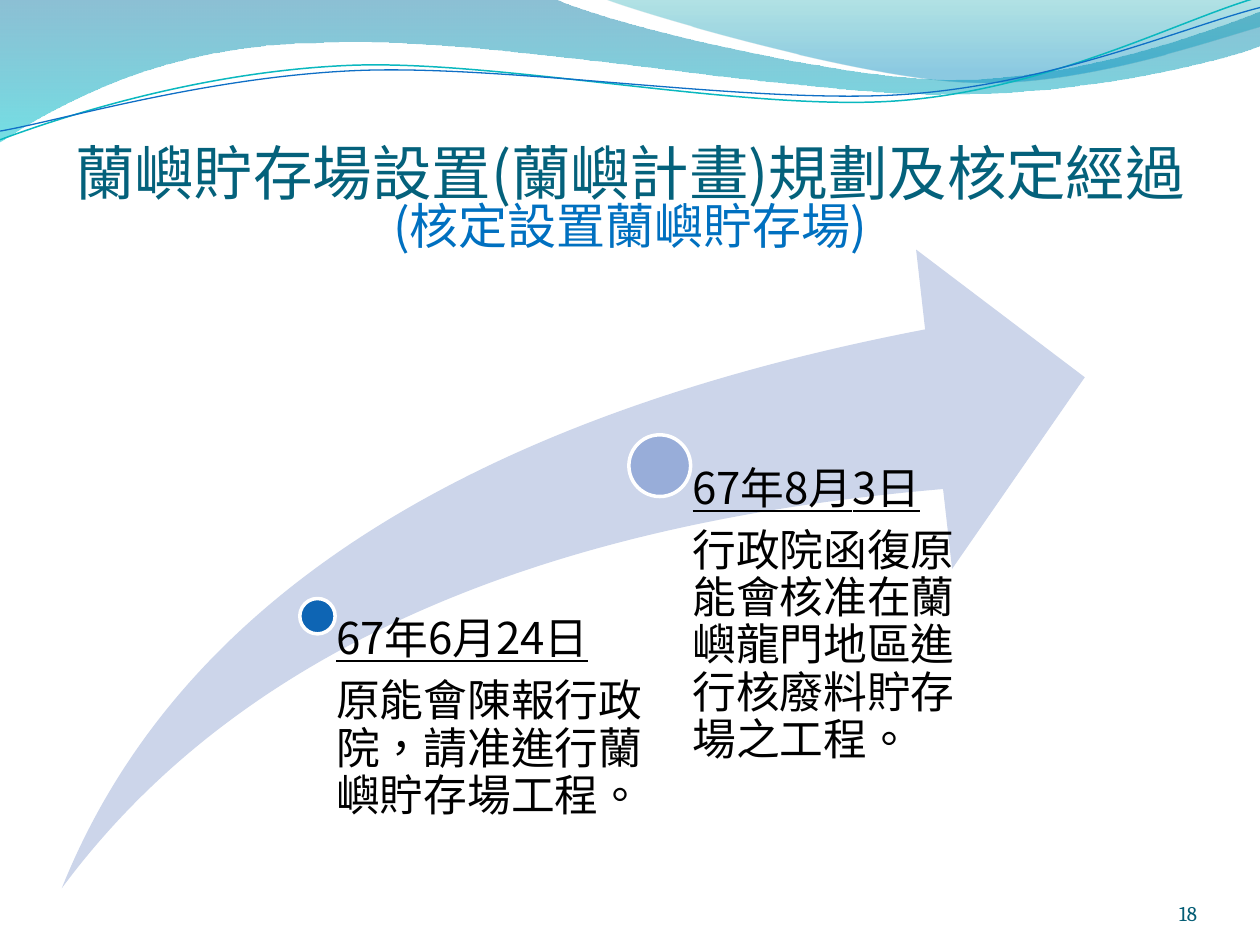
from pptx import Presentation
from pptx.dml.color import RGBColor
from pptx.enum.shapes import MSO_SHAPE
from pptx.enum.text import MSO_ANCHOR, PP_ALIGN
from pptx.oxml.ns import qn
from pptx.util import Pt
from lxml.etree import SubElement

SANS = "Noto Sans CJK SC"

# Each outline is a start point, then segments: 2 numbers for a line, 6 for a Bézier curve.
BROAD_WAVE = [(0, -0.7), (316.8, -0.7),
              (342.7, 12.2, 478.1, 45.4, 545.8, 45.4), (614.2, 45.4, 689.8, 18.7, 720, 6.5),
              (720.7, 25.9),
              (707.8, 31.7, 626.4, 54.7, 537.1, 54), (447.8, 54, 275, 20.2, 185, 24.5),
              (92.9, 25.2, 33.1, 59.8, -0.7, 81.4), (0, -0.7)]
RIGHT_WAVE = [(344.9, -0.7), (366.5, 7.9, 491, 44.6, 553.7, 46.8),
              (616.3, 49.7, 691.9, 23, 720, 15.1), (720, 0), (344.9, -0.7)]
TEAL_STRAND = [(0, 79.9), (34.6, 67, 113.8, 41, 199.4, 37.4),
               (284.4, 33.8, 427, 64.1, 513.4, 57.6), (599.8, 51.1, 675.4, 10.8, 718.6, -1.4)]
BLUE_STRAND = [(0, 74.9), (33.8, 69.1, 118.1, 43.9, 203.8, 40.3),
               (290.2, 36.7, 429.8, 59.8, 516.2, 54), (601.9, 48.2, 677.5, 15.1, 720, 4.3)]

ARROW_LEFT, ARROW_TOP, ARROW_WIDTH, ARROW_HEIGHT = 35.3, 142.6, 584.6, 365
# Centre x, centre y, diameter, colour, text inset, date, event
MILESTONES = [
    (181.4, 352.1, 20.2, "0E65B4", 10.8, "67年6月24日",
     "原能會陳報行政院，請准進行蘭嶼貯存場工程。"),
    (377, 266.1, 35.3, "98ADD9", 18.7, "67年8月3日",
     "行政院函復原能會核准在蘭嶼龍門地區進行核廢料貯存場之工程。"),
]


def rgb(hex_string):
    return RGBColor.from_string(hex_string)


def add_outline(slide, outline, close):
    """Lay every point as a corner, then join the corners of each curve into one Bézier."""
    corners = [(Pt(x), Pt(y)) for segment in outline
               for x, y in zip(segment[::2], segment[1::2])]
    builder = slide.shapes.build_freeform(*corners[0])
    builder.add_line_segments(corners[1:], close=close)
    shape = builder.convert_to_shape()
    shape.shadow.inherit = False

    lines = iter(list(shape._element.spPr.iter(qn("a:lnTo"))))
    for segment in outline[1:]:
        first = next(lines)
        if len(segment) == 6:
            curve = first.makeelement(qn("a:cubicBezTo"))
            first.addprevious(curve)
            for line in (first, next(lines), next(lines)):
                curve.append(line[0])
                line.getparent().remove(line)
    return shape


def add_wave(slide, outline, stops):
    """Add a wave filled from top to bottom; a stop is position, colour, opacity in percent."""
    shape = add_outline(slide, outline, True)
    shape.line.fill.background()
    shape.fill.gradient()
    shape.fill.gradient_angle = 270
    for gradient_stop, (position, color, _) in zip(shape.fill.gradient_stops, stops):
        gradient_stop.position = position
        gradient_stop.color.rgb = rgb(color)
    for element, (_, _, opacity) in zip(shape._element.spPr.iter(qn("a:srgbClr")), stops):
        SubElement(element, qn("a:alpha"), val=str(opacity * 1000))


def add_strand(slide, outline, color, width):
    shape = add_outline(slide, outline, False)
    shape.fill.background()
    shape.line.color.rgb = rgb(color)
    shape.line.width = Pt(width)


def add_preset(slide, preset, left, top, width, height, color):
    shape = slide.shapes.add_shape(preset, Pt(left), Pt(top), Pt(width), Pt(height))
    shape.shadow.inherit = False
    shape.fill.solid()
    shape.fill.fore_color.rgb = rgb(color)
    shape.line.fill.background()
    return shape


def add_text(slide, left, top, width, height, text, anchor=MSO_ANCHOR.TOP, inset=0):
    box = slide.shapes.add_textbox(Pt(left), Pt(top), Pt(width), Pt(height))
    frame = box.text_frame
    frame.word_wrap = True
    frame.vertical_anchor = anchor
    frame.margin_left = Pt(inset)
    frame.margin_top = frame.margin_right = frame.margin_bottom = 0
    frame.text = text
    return frame.paragraphs


def style(run, size, color, font=SANS, underline=False):
    run.font.size = Pt(size)
    run.font.name = font
    run.font.underline = underline
    run.font.color.rgb = rgb(color)
    run.font._element.set("lang", "zh-TW")
    SubElement(run.font._element, qn("a:ea"), typeface=font)


def add_milestone(slide, center_x, center_y, diameter, color, inset, date, event):
    dot = add_preset(slide, MSO_SHAPE.OVAL, center_x - diameter / 2, center_y - diameter / 2,
                     diameter, diameter, color)
    dot.line.color.rgb = rgb("FFFFFF")
    dot.line.width = Pt(2)
    height = ARROW_TOP + ARROW_HEIGHT - center_y
    paragraphs = add_text(slide, center_x, center_y, 190, height, f"{date}\n{event}", inset=inset)
    for paragraph, underline in zip(paragraphs, (True, False)):
        paragraph.line_spacing = Pt(27)
        paragraph.space_after = Pt(8.5)
        style(paragraph.runs[0], 25, "000000", underline=underline)


def main():
    presentation = Presentation()
    presentation.slide_width, presentation.slide_height = Pt(720), Pt(540)
    slide = presentation.slides.add_slide(presentation.slide_layouts[6])

    add_wave(slide, BROAD_WAVE, [(0, "0074A1", 45), (1, "00C6CF", 55)])
    add_wave(slide, RIGHT_WAVE, [(0, "00A1A9", 30), (0.8, "008BBF", 45)])
    add_strand(slide, TEAL_STRAND, "0AB8BF", 0.85)
    add_strand(slide, BLUE_STRAND, "0F6FC6", 0.75)

    title, = add_text(slide, 36, 55.4, 648, 90,
                      "蘭嶼貯存場設置(蘭嶼計畫)規劃及核定經過\v(核定設置蘭嶼貯存場)",
                      MSO_ANCHOR.BOTTOM)
    title.alignment = PP_ALIGN.CENTER
    title.line_spacing = 0.81
    heading, subtitle = title.runs
    style(heading, 34, "04617B")
    style(subtitle, 28, "0070C0")

    number, = add_text(slide, 624, 500.4, 60, 28.8, "18", MSO_ANCHOR.BOTTOM)
    number.alignment = PP_ALIGN.RIGHT
    style(number.runs[0], 12, "045D75", "Cambria")

    arrow = add_preset(slide, MSO_SHAPE.SWOOSH_ARROW, ARROW_LEFT, ARROW_TOP,
                       ARROW_WIDTH, ARROW_HEIGHT, "CCD5EA")
    arrow.adjustments[0] = arrow.adjustments[1] = 0.25
    for milestone in MILESTONES:
        add_milestone(slide, *milestone)

    presentation.save("out.pptx")


if __name__ == "__main__":
    main()
